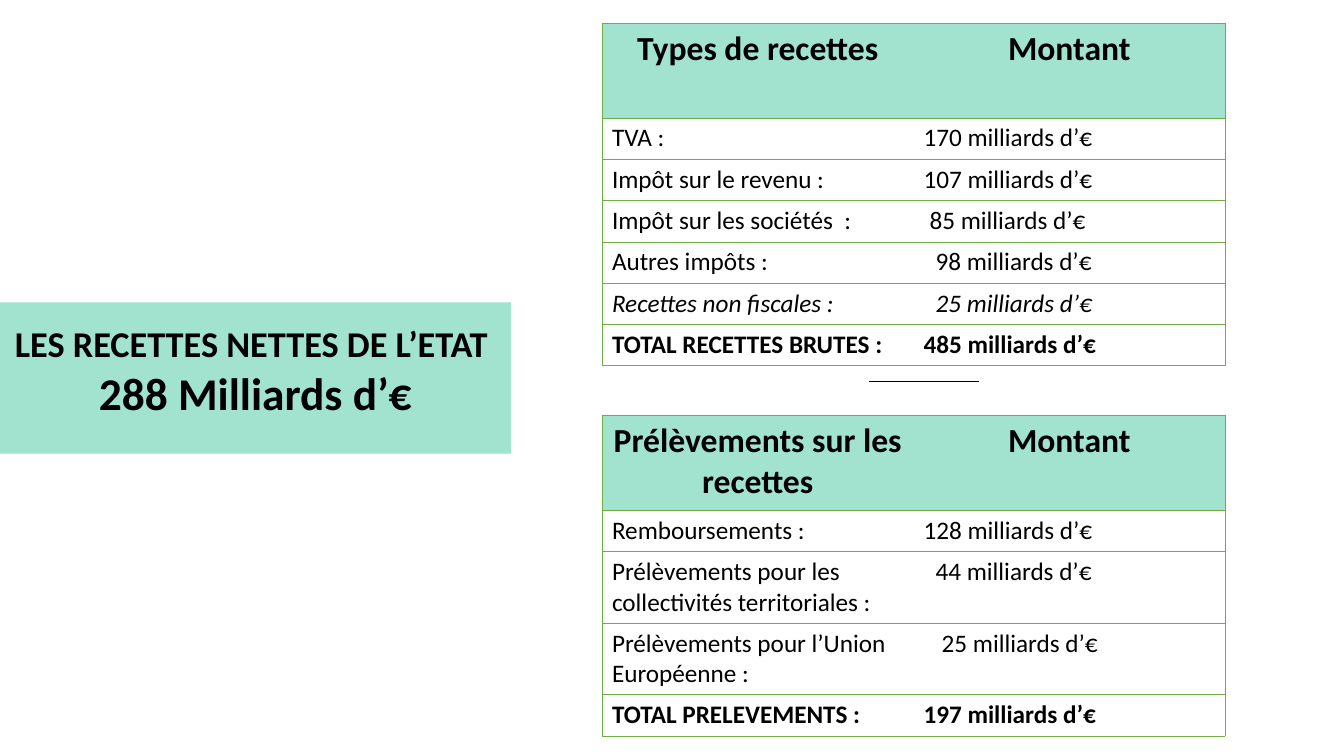
from dataclasses import dataclass

import pptx
import pptx.dml.color
import pptx.enum.shapes
import pptx.enum.text
import pptx.util
from lxml import etree
from pptx.oxml import ns

Inches = pptx.util.Inches
Pt = pptx.util.Pt
Align = pptx.enum.text.PP_ALIGN

MINT, GREEN, BLACK, WHITE = "A1E3CF", "70AD47", "000000", "FFFFFF"
TABLE_LEFT, COLUMN_WIDTH = 5.97, 3.09
HEADER_HEIGHT, LINE_HEIGHT, WRAPPED_HEIGHT = 0.94, 0.41, 0.71
CELL_MARGIN, INDENT_STEP = 0.1, 0.06


@dataclass
class Entry:
    label: str
    amount: str
    indent: int = 0
    height: float = LINE_HEIGHT
    bold: bool = False
    italic: bool = False


@dataclass
class Account:
    title: str
    top: float
    entries: list[Entry]


RECEIPTS = Account("Types de recettes", 0.23, [
    Entry("TVA :", "170 milliards d’€"),
    Entry("Impôt sur le revenu :", "107 milliards d’€"),
    Entry("Impôt sur les sociétés  :", "85 milliards d’€", indent=1),
    Entry("Autres impôts :", "98 milliards d’€", indent=2),
    Entry("Recettes non fiscales :", "25 milliards d’€", indent=2, italic=True),
    Entry("TOTAL RECETTES BRUTES :", "485 milliards d’€", bold=True),
])
DEDUCTIONS = Account("Prélèvements sur les recettes", 4.12, [
    Entry("Remboursements :", "128 milliards d’€"),
    Entry("Prélèvements pour les collectivités territoriales :",
          "44 milliards d’€", indent=2, height=WRAPPED_HEIGHT),
    Entry("Prélèvements pour l’Union Européenne :",
          "25 milliards d’€", indent=3, height=WRAPPED_HEIGHT),
    Entry("TOTAL PRELEVEMENTS :", "197 milliards d’€", bold=True),
])


def rgb(color: str) -> pptx.dml.color.RGBColor:
    return pptx.dml.color.RGBColor.from_string(color)


def write(paragraph, text: str, size: float, bold: bool = False,
          italic: bool = False, align=Align.LEFT) -> None:
    paragraph.text = text
    paragraph.alignment = align
    font = paragraph.font
    font.name, font.size, font.bold, font.italic = "Calibri", Pt(size), bold, italic
    font.color.rgb = rgb(BLACK)


def set_borders(cell, column: int) -> None:
    """Draw every edge except the one between the two columns."""
    properties = cell._tc.get_or_add_tcPr()
    inner = "lnR" if column == 0 else "lnL"
    for position, edge in enumerate(("lnL", "lnR", "lnT", "lnB")):
        line = etree.Element(ns.qn(f"a:{edge}"), w=str(Pt(0.5)))
        if edge == inner:
            etree.SubElement(line, ns.qn("a:noFill"))
        else:
            fill = etree.SubElement(line, ns.qn("a:solidFill"))
            etree.SubElement(fill, ns.qn("a:srgbClr"), val=GREEN)
        properties.insert(position, line)


def add_account(slide, account: Account) -> None:
    heights = [HEADER_HEIGHT] + [entry.height for entry in account.entries]
    table = slide.shapes.add_table(
        len(heights), 2, Inches(TABLE_LEFT), Inches(account.top),
        Inches(2 * COLUMN_WIDTH), Inches(sum(heights))).table
    table.first_row = table.horz_banding = False
    for column in table.columns:
        column.width = Inches(COLUMN_WIDTH)
    for row_number, height in enumerate(heights):
        table.rows[row_number].height = Inches(height)
        for column_number in range(2):
            cell = table.cell(row_number, column_number)
            cell.fill.solid()
            cell.fill.fore_color.rgb = rgb(WHITE if row_number else MINT)
            set_borders(cell, column_number)

    for column_number, heading in enumerate((account.title, "Montant")):
        write(table.cell(0, column_number).text_frame.paragraphs[0],
              heading, 24, bold=True, align=Align.CENTER)
    for row_number, entry in enumerate(account.entries, 1):
        for column_number, text in enumerate((entry.label, entry.amount)):
            write(table.cell(row_number, column_number).text_frame.paragraphs[0],
                  text, 18, entry.bold, entry.italic)
        table.cell(row_number, 1).margin_left = Inches(
            CELL_MARGIN + entry.indent * INDENT_STEP)


def add_net_receipts(slide) -> None:
    banner = slide.shapes.add_shape(
        pptx.enum.shapes.MSO_SHAPE.RECTANGLE,
        Inches(0), Inches(3), Inches(5.07), Inches(1.5))
    banner.shadow.inherit = False
    banner.fill.solid()
    banner.fill.fore_color.rgb = rgb(MINT)
    banner.line.fill.background()
    frame = banner.text_frame
    frame.word_wrap = True
    frame.vertical_anchor = pptx.enum.text.MSO_ANCHOR.BOTTOM
    frame.margin_bottom = Inches(0.34)
    write(frame.paragraphs[0], "LES RECETTES NETTES DE L’ETAT ", 25.9,
          bold=True, align=Align.CENTER)
    write(frame.add_paragraph(), "288 Milliards d’€", 32.4,
          bold=True, align=Align.CENTER)


def add_minus_sign(slide) -> None:
    minus = slide.shapes.add_connector(
        pptx.enum.shapes.MSO_CONNECTOR.STRAIGHT,
        Inches(8.62), Inches(3.78), Inches(9.71), Inches(3.78))
    minus.line.color.rgb = rgb(BLACK)
    minus.line.width = Pt(0.5)
    etree.SubElement(minus._element.spPr, ns.qn("a:effectLst"))


def main() -> None:
    presentation = pptx.Presentation()
    presentation.slide_width = Inches(13.33)
    presentation.slide_height = Inches(7.5)
    slide = presentation.slides.add_slide(presentation.slide_layouts[6])
    add_net_receipts(slide)
    for account in (RECEIPTS, DEDUCTIONS):
        add_account(slide, account)
    add_minus_sign(slide)
    presentation.save("out.pptx")


if __name__ == "__main__":
    main()
